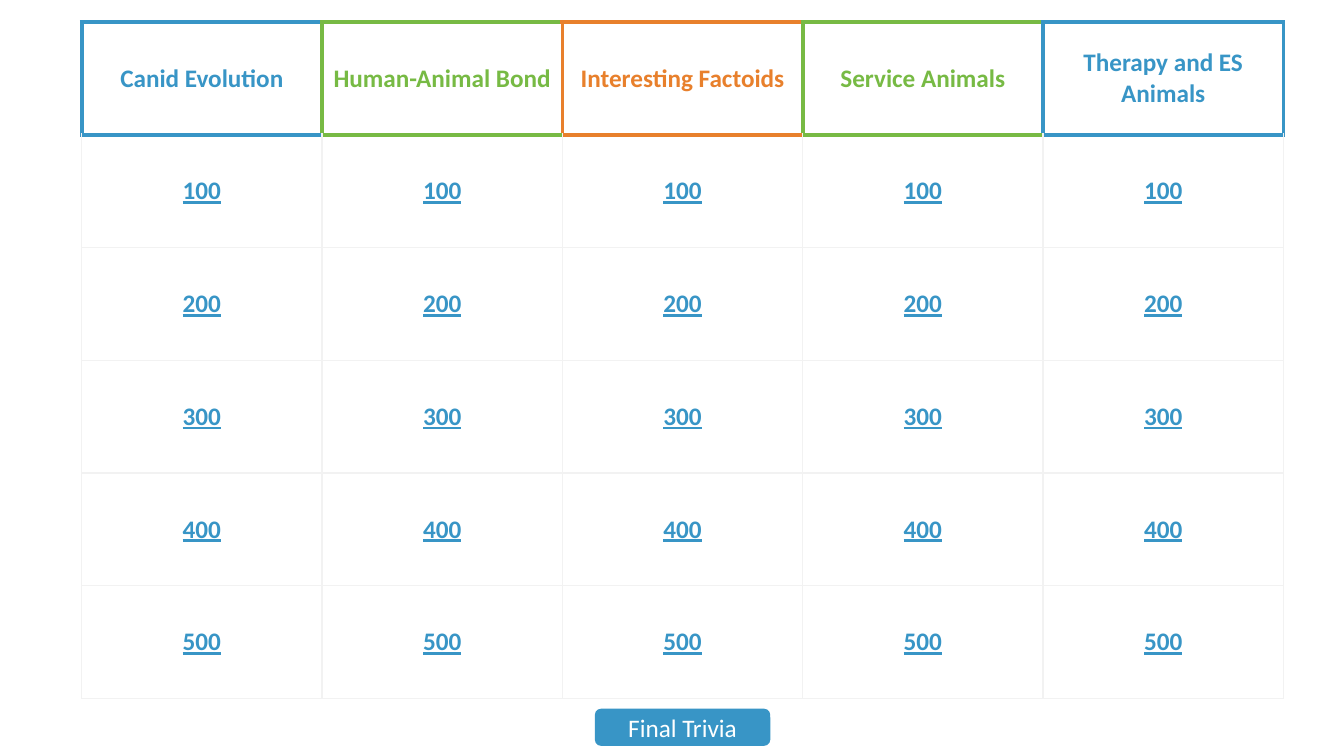
from dataclasses import dataclass

from lxml import etree
from pptx import Presentation
from pptx.dml.color import RGBColor
from pptx.enum.shapes import MSO_SHAPE
from pptx.enum.text import MSO_ANCHOR, PP_ALIGN
from pptx.oxml.ns import qn
from pptx.util import Emu, Inches, Pt

MIDDLE = MSO_ANCHOR.MIDDLE
CENTER = PP_ALIGN.CENTER
ROUNDED = MSO_SHAPE.ROUNDED_RECTANGLE


@dataclass(frozen=True)
class Theme:
    blue: str = "3895C6"
    green: str = "77BA44"
    orange: str = "E8802C"
    white: str = "FFFFFF"
    rule: str = "F2F2F2"
    font: str = "Calibri"
    size: float = 18
    thick: float = 3
    thin: float = 1


@dataclass(frozen=True)
class Category:
    title: str
    color: str


@dataclass(frozen=True)
class Grid:
    left: float
    top: float
    width: float
    height: float
    columns: int
    rows: int

    def across(self, columns: float) -> Emu:
        return Inches(self.width * columns / self.columns)

    def down(self, rows: float) -> Emu:
        return Inches(self.height * rows / self.rows)

    def x(self, column: float) -> Emu:
        return Inches(self.left) + self.across(column)

    def y(self, row: float) -> Emu:
        return Inches(self.top) + self.down(row)


THEME = Theme()
CATEGORIES = [
    Category("Canid Evolution", THEME.blue),
    Category("Human-Animal Bond", THEME.green),
    Category("Interesting Factoids", THEME.orange),
    Category("Service Animals", THEME.green),
    Category("Therapy and ES Animals", THEME.blue),
]
POINTS = [100, 200, 300, 400, 500]
GRID = Grid(0.81, 0.22, 11.92, 6.71, len(CATEGORIES), len(POINTS) + 1)
BUTTON_COLUMNS, BUTTON_ROWS, BUTTON_GAP = 0.73, 0.33, 0.09
CELL_FORMAT = {
    "vertical_anchor": MIDDLE,
    "margin_left": Inches(0.09),
    "margin_right": Inches(0.09),
    "margin_top": Inches(0.04),
    "margin_bottom": Inches(0.04),
}


def apply_format(target, values: dict) -> None:
    for name, value in values.items():
        setattr(target, name, value)


def write_text(frame, text: str, color: str, **extra) -> None:
    para = frame.paragraphs[0]
    para.alignment = CENTER
    span = para.add_run()
    span.text = text
    apply_format(span.font, {"name": THEME.font, "size": Pt(THEME.size), **extra})
    span.font.color.rgb = RGBColor.from_string(color)


def set_border(cell, side: str, color: str, points: float) -> None:
    properties = cell._tc.get_or_add_tcPr()
    line = etree.SubElement(properties, qn(f"a:ln{side}"), w=str(Pt(points)))
    fill = etree.SubElement(line, qn("a:solidFill"))
    etree.SubElement(fill, qn("a:srgbClr"), val=color)


def fill_cell(cell, text: str, color: str, borders: dict, **extra) -> None:
    apply_format(cell, CELL_FORMAT)
    write_text(cell.text_frame, text, color, bold=True, **extra)
    for side in "LRTB":
        set_border(cell, side, *borders.get(side, (THEME.rule, THEME.thin)))
    cell.fill.solid()
    cell.fill.fore_color.rgb = RGBColor.from_string(THEME.white)


def add_board(page) -> None:
    table = page.shapes.add_table(
        GRID.rows, GRID.columns, GRID.x(0), GRID.y(0),
        GRID.across(GRID.columns), GRID.down(GRID.rows),
    ).table
    apply_format(table, {"first_row": False, "horz_banding": False})
    for column in table.columns:
        column.width = GRID.across(1)
    for row in table.rows:
        row.height = GRID.down(1)

    # Neighbouring cells share a border, so each header ends in the next colour
    neighbours = CATEGORIES[1:] + CATEGORIES[-1:]
    for column, (category, neighbour) in enumerate(zip(CATEGORIES, neighbours)):
        own = (category.color, THEME.thick)
        frame = {**dict.fromkeys("LTB", own), "R": (neighbour.color, THEME.thick)}
        fill_cell(table.cell(0, column), category.title, category.color, frame)
        for row, points in enumerate(POINTS, start=1):
            borders = {"T": own} if row == 1 else {}
            fill_cell(table.cell(row, column), str(points), THEME.blue, borders,
                      underline=True)


def add_final_button(page) -> None:
    box = page.shapes.add_shape(
        ROUNDED,
        GRID.x((GRID.columns - BUTTON_COLUMNS) / 2), GRID.y(GRID.rows + BUTTON_GAP),
        GRID.across(BUTTON_COLUMNS), GRID.down(BUTTON_ROWS),
    )
    box.shadow.inherit = False
    box.fill.solid()
    box.fill.fore_color.rgb = RGBColor.from_string(THEME.blue)
    box.line.fill.background()
    box.text_frame.vertical_anchor = MIDDLE
    write_text(box.text_frame, "Final Trivia", THEME.white)


def main() -> None:
    deck = Presentation()
    apply_format(deck, {"slide_width": Inches(13.33), "slide_height": Inches(7.5)})
    page = deck.slides.add_slide(deck.slide_layouts[6])

    # Question board
    add_board(page)

    # Closing round
    add_final_button(page)
    deck.save("out.pptx")


if __name__ == "__main__":
    main()
